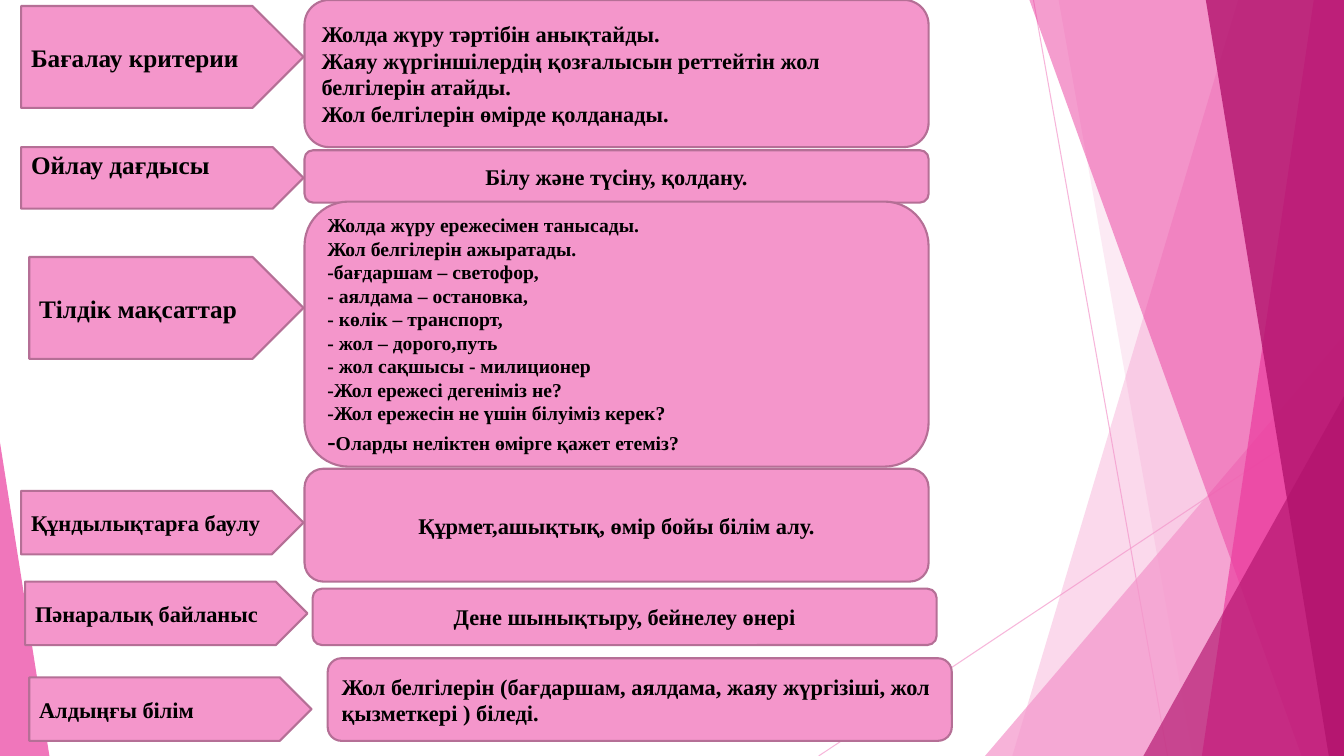
from dataclasses import dataclass
from typing import Any, Union

import lxml.etree
import pptx
import pptx.dml.color
import pptx.enum.shapes
import pptx.enum.text
import pptx.oxml.ns
import pptx.util

Inches = pptx.util.Inches
Preset = pptx.enum.shapes.MSO_SHAPE
Anchor = pptx.enum.text.MSO_ANCHOR
Align = pptx.enum.text.PP_ALIGN
WIDTH, HEIGHT = 13.33, 7.5


@dataclass(frozen=True)
class Theme:
    font: str = "Times New Roman"
    text: str = "000000"
    light: str = "F496CB"
    vivid: str = "EB3D9F"
    deep: str = "B2136D"
    border: str = "B56F96"
    border_width: float = 1.5
    ray_width: float = 0.75
    large: int = 18
    medium: int = 16
    small: int = 14


THEME = Theme()


@dataclass(frozen=True)
class Ray:
    start: tuple[float, float]
    end: tuple[float, float]


@dataclass(frozen=True)
class Facet:
    top_x: float
    bottom_x: float
    color: str
    opacity: int


@dataclass(frozen=True)
class Corner:
    left: float
    top: float
    width: float
    apex: float
    color: str
    opacity: int


@dataclass(frozen=True)
class Box:
    left: float
    top: float
    width: float
    height: float
    lines: tuple[str, ...]
    size: int = THEME.medium
    align: Align = Align.LEFT
    anchor: Anchor = Anchor.MIDDLE
    margin_top: float = 0.05


@dataclass(frozen=True)
class Row:
    label: Box
    detail: Box


BACKDROP: list[Union[Ray, Facet, Corner]] = [
    Ray((10.25, 0), (11.58, HEIGHT)),
    Ray((WIDTH, 4.03), (8.12, HEIGHT)),
    Facet(12.28, 10.04, THEME.light, 36),
    Facet(10.5, 11.83, THEME.light, 20),
    Corner(9.77, 3.33, 3.56, 1, THEME.light, 72),
    Facet(10.21, 12.91, THEME.vivid, 50),
    Facet(13.03, 11.92, THEME.vivid, 70),
    Facet(11.96, 13.18, THEME.deep, 80),
    Corner(11.34, 3.93, 1.99, 1, THEME.deep, 66),
    Corner(0, 4.39, 0.49, 0, THEME.vivid, 70),
]

ROWS = [
    Row(
        Box(0.21, 0.06, 2.8, 1.01, ("Бағалау критерии",), THEME.large),
        Box(3.02, 0, 6.19, 1.46, (
            "Жолда жүру тәртібін анықтайды.",
            "Жаяу жүргіншілердің қозғалысын реттейтін жол белгілерін атайды.",
            "Жол белгілерін өмірде қолданады.",
        )),
    ),
    Row(
        Box(0.21, 1.46, 2.8, 0.61, ("Ойлау дағдысы",), THEME.large,
            anchor=Anchor.TOP, margin_top=0.02),
        Box(3.02, 1.49, 6.19, 0.52, ("Білу және түсіну, қолдану.",), align=Align.CENTER),
    ),
    Row(
        Box(0.29, 2.55, 2.72, 1.01, ("Тілдік мақсаттар",), THEME.large),
        Box(3.02, 2, 6.19, 2.63, (
            "Жолда жүру ережесімен танысады.",
            "Жол белгілерін ажыратады.",
            "-бағдаршам – светофор,",
            "- аялдама – остановка,",
            "- көлік – транспорт,",
            "- жол – дорого,путь",
            "- жол сақшысы - милиционер",
            "-Жол ережесі дегеніміз не?",
            "-Жол ережесін не үшін білуіміз керек?",
            "-",
        ), THEME.small),
    ),
    Row(
        Box(0.21, 4.87, 2.8, 0.63, ("Құндылықтарға баулу",)),
        Box(3.02, 4.65, 6.19, 1.12, ("Құрмет,ашықтық, өмір бойы білім алу.",),
            align=Align.CENTER),
    ),
    Row(
        Box(0.25, 5.77, 2.8, 0.63, ("Пәнаралық байланыс",)),
        Box(3.1, 5.84, 6.19, 0.56, ("Дене шынықтыру, бейнелеу өнері",), align=Align.CENTER),
    ),
    Row(
        Box(0.29, 6.72, 2.8, 0.63, ("Алдыңғы білім",)),
        Box(3.25, 6.53, 6.19, 0.82, (
            "Жол белгілерін (бағдаршам, аялдама, жаяу жүргізіші, жол қызметкері ) біледі.",
        )),
    ),
]
CLOSING_QUESTION = "Оларды неліктен өмірге қажет етеміз?"


def rgb(color: str) -> pptx.dml.color.RGBColor:
    return pptx.dml.color.RGBColor.from_string(color)


def set_opacity(shape: Any, percent: int) -> None:
    qn = pptx.oxml.ns.qn
    for color in shape.element.spPr.iter(qn("a:srgbClr")):
        lxml.etree.SubElement(color, qn("a:alpha")).set("val", str(percent * 1000))


def draw_ray(slide: Any, ray: Ray) -> None:
    points = [Inches(value) for value in ray.start + ray.end]
    line = slide.shapes.add_connector(pptx.enum.shapes.MSO_CONNECTOR.STRAIGHT, *points)
    line.line.color.rgb = rgb(THEME.light)
    line.line.width = pptx.util.Pt(THEME.ray_width)
    set_opacity(line, 70)
    lxml.etree.SubElement(line.element.spPr, pptx.oxml.ns.qn("a:effectLst"))


def paint_glass(shape: Any, color: str, opacity: int) -> None:
    shape.shadow.inherit = False
    shape.fill.solid()
    shape.fill.fore_color.rgb = rgb(color)
    shape.line.fill.background()
    set_opacity(shape, opacity)


def draw_facet(slide: Any, facet: Facet) -> None:
    corners = [(WIDTH, 0), (WIDTH, HEIGHT), (facet.bottom_x, HEIGHT)]
    builder = slide.shapes.build_freeform(Inches(facet.top_x), 0)
    builder.add_line_segments([(Inches(x), Inches(y)) for x, y in corners], close=True)
    paint_glass(builder.convert_to_shape(), facet.color, facet.opacity)


def draw_corner(slide: Any, corner: Corner) -> None:
    shape = slide.shapes.add_shape(
        Preset.ISOSCELES_TRIANGLE, Inches(corner.left), Inches(corner.top),
        Inches(corner.width), Inches(HEIGHT - corner.top))
    shape.adjustments[0] = corner.apex
    paint_glass(shape, corner.color, corner.opacity)


def format_run(run: Any, size: int) -> None:
    run.font.name = THEME.font
    run.font.size = pptx.util.Pt(size)
    run.font.bold = True
    run.font.color.rgb = rgb(THEME.text)


def draw_box(slide: Any, box: Box, preset: Preset) -> Any:
    place = [Inches(value) for value in (box.left, box.top, box.width, box.height)]
    shape = slide.shapes.add_shape(preset, *place)
    shape.shadow.inherit = False
    shape.fill.solid()
    shape.fill.fore_color.rgb = rgb(THEME.light)
    shape.line.color.rgb = rgb(THEME.border)
    shape.line.width = pptx.util.Pt(THEME.border_width)
    frame = shape.text_frame
    frame.word_wrap = True
    frame.vertical_anchor = box.anchor
    frame.margin_top = Inches(box.margin_top)
    frame.text = "\n".join(box.lines)
    for paragraph in frame.paragraphs:
        paragraph.alignment = box.align
        for run in paragraph.runs:
            format_run(run, THEME.large if run.text == "-" else box.size)
            if run.text == "-":
                question = paragraph.add_run()
                question.text = CLOSING_QUESTION
                format_run(question, box.size)
    return shape


def main() -> None:
    presentation = pptx.Presentation()
    presentation.slide_width = Inches(WIDTH)
    presentation.slide_height = Inches(HEIGHT)
    slide = presentation.slides.add_slide(presentation.slide_layouts[6])
    painters = {Ray: draw_ray, Facet: draw_facet, Corner: draw_corner}
    for piece in BACKDROP:
        painters[type(piece)](slide, piece)
    for row in ROWS:
        draw_box(slide, row.label, Preset.PENTAGON)
        draw_box(slide, row.detail, Preset.ROUNDED_RECTANGLE)
    presentation.save("out.pptx")


if __name__ == "__main__":
    main()
